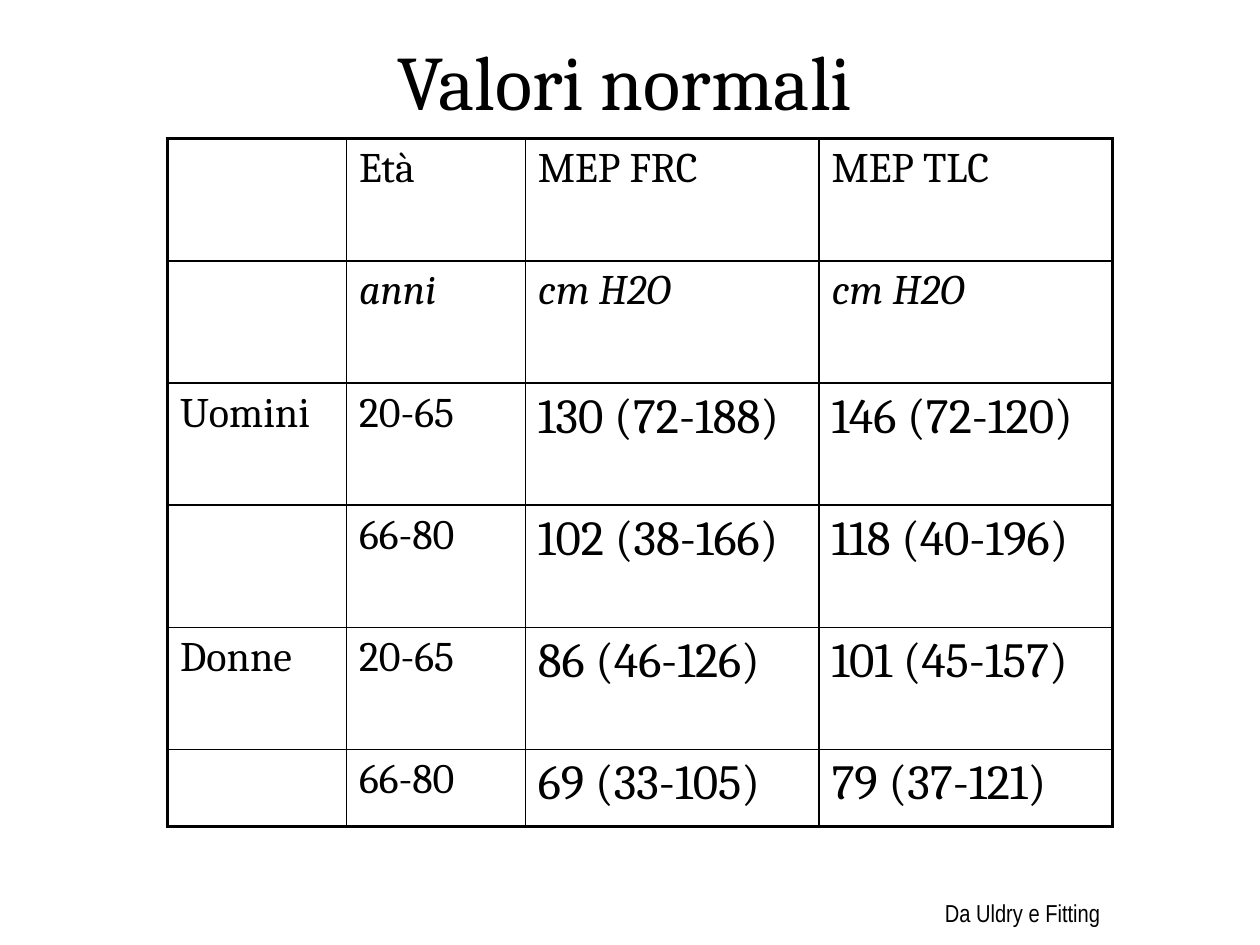
from lxml import etree
from pptx import Presentation
from pptx.dml.color import RGBColor
from pptx.enum import text
from pptx.oxml import ns
from pptx.util import Inches, Pt

BLACK = "000000"
SERIF = "Cambria"
THIN, THICK = 1, 2.25

ROWS = [
    ("", "Età", "MEP FRC", "MEP TLC"),
    ("", "anni", "cm H2O", "cm H2O"),
    ("Uomini", "20-65", "130 (72-188)", "146 (72-120)"),
    ("", "66-80", "102 (38-166)", "118 (40-196)"),
    ("Donne", "20-65", "86 (46-126)", "101 (45-157)"),
    ("", "66-80", "69 (33-105)", "79 (37-121)"),
]
COL_WIDTHS = (1.42, 1.42, 2.33, 2.33)
ROW_HEIGHTS = (0.97,) * 5 + (0.61,)
UNITS_ROW, FIRST_DATA_ROW, FIRST_VALUE_COL = 1, 2, 2


def color(hex_value):
    return RGBColor.from_string(hex_value)


class SlideBuilder:
    def __init__(self, prs):
        self.s = prs.slides.add_slide(prs.slide_layouts[5])

    def style(self, p, size, font=SERIF, italic=False):
        for r in p.runs:
            r.font.name = font
            r.font.size = Pt(size)
            r.font.italic = italic
            r.font.color.rgb = color(BLACK)

    def place(self, sp, box):
        sp.left, sp.top, sp.width, sp.height = map(Inches, box)

    def title(self, words, box):
        sp = self.s.shapes.title
        self.place(sp, box)
        tf = sp.text_frame
        tf.text = words
        tf.vertical_anchor = text.MSO_ANCHOR.MIDDLE
        p = tf.paragraphs[0]
        p.alignment = text.PP_ALIGN.CENTER
        self.style(p, 44)

    def label(self, words, box, size, font):
        tf = self.s.shapes.add_textbox(*map(Inches, box)).text_frame
        tf.word_wrap = True
        tf.text = words
        self.style(tf.paragraphs[0], size, font)

    def border(self, cell, side, width):
        ln = etree.SubElement(cell._tc.get_or_add_tcPr(), ns.qn(f"a:ln{side}"),
                              w=str(Pt(width)))
        fill = etree.SubElement(ln, ns.qn("a:solidFill"))
        etree.SubElement(fill, ns.qn("a:srgbClr"), val=BLACK)

    def table(self, rows, left, top):
        n_rows, n_cols = len(rows), len(rows[0])
        box = (left, top, sum(COL_WIDTHS), sum(ROW_HEIGHTS))
        table = self.s.shapes.add_table(n_rows, n_cols, *map(Inches, box)).table
        table.first_row = table.horz_banding = False
        for column, width in zip(table.columns, COL_WIDTHS):
            column.width = Inches(width)
        for row, height in zip(table.rows, ROW_HEIGHTS):
            row.height = Inches(height)
        for i, row in enumerate(rows):
            for j, words in enumerate(row):
                cell = table.cell(i, j)
                cell.text = words
                is_value = i >= FIRST_DATA_ROW and j >= FIRST_VALUE_COL
                self.style(cell.text_frame.paragraphs[0], 28 if is_value else 24,
                           italic=i == UNITS_ROW)
                outer = {"L": j == 0, "R": j == n_cols - 1,
                         "T": i == 0, "B": i == n_rows - 1}
                for side, is_outer in outer.items():
                    self.border(cell, side, THICK if is_outer else THIN)
                cell.fill.background()


def main():
    prs = Presentation()
    prs.slide_width, prs.slide_height = Inches(10), Inches(7.5)
    slide = SlideBuilder(prs)
    slide.title("Valori normali", (1.67, 0.17, 6.58, 0.92))
    slide.label("Da Uldry e Fitting", (7.4, 7.08, 2.43, 0.34), 14, "Arial Narrow")
    slide.table(ROWS, 1.33, 1.1)
    prs.save("out.pptx")


if __name__ == "__main__":
    main()
